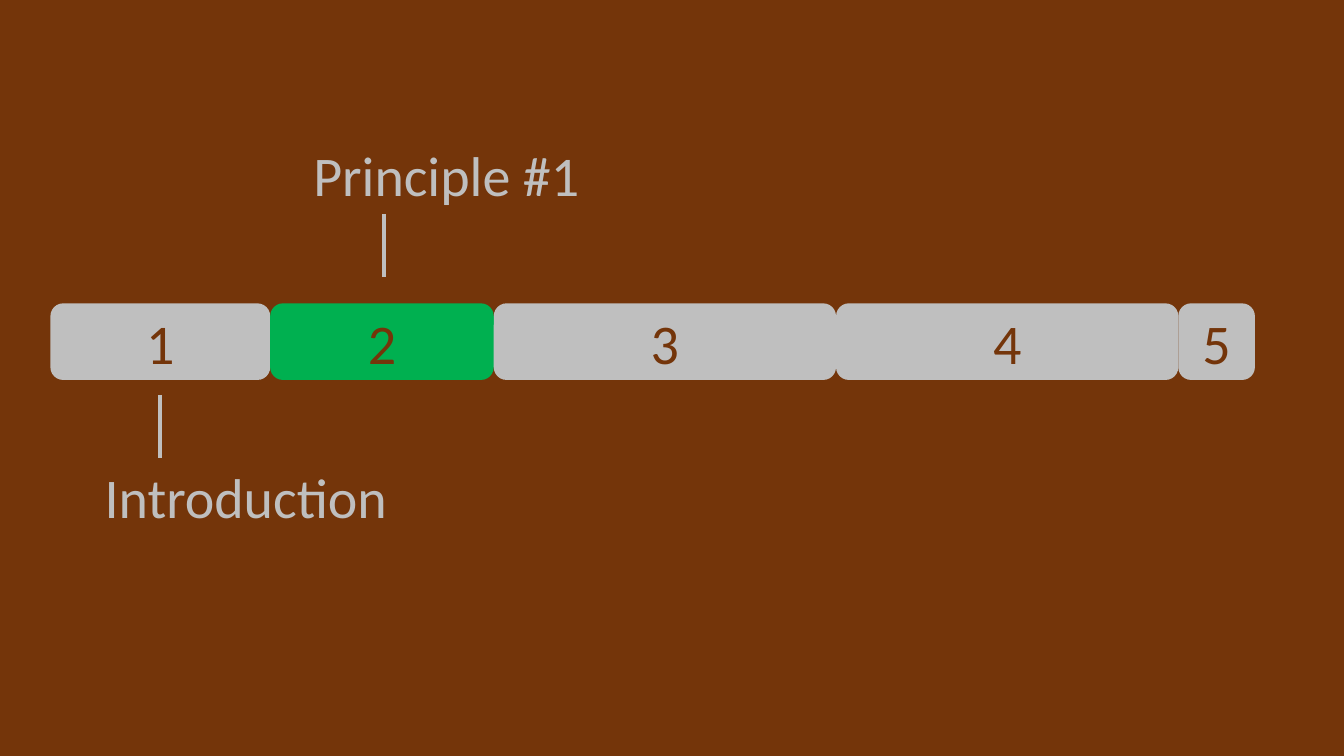
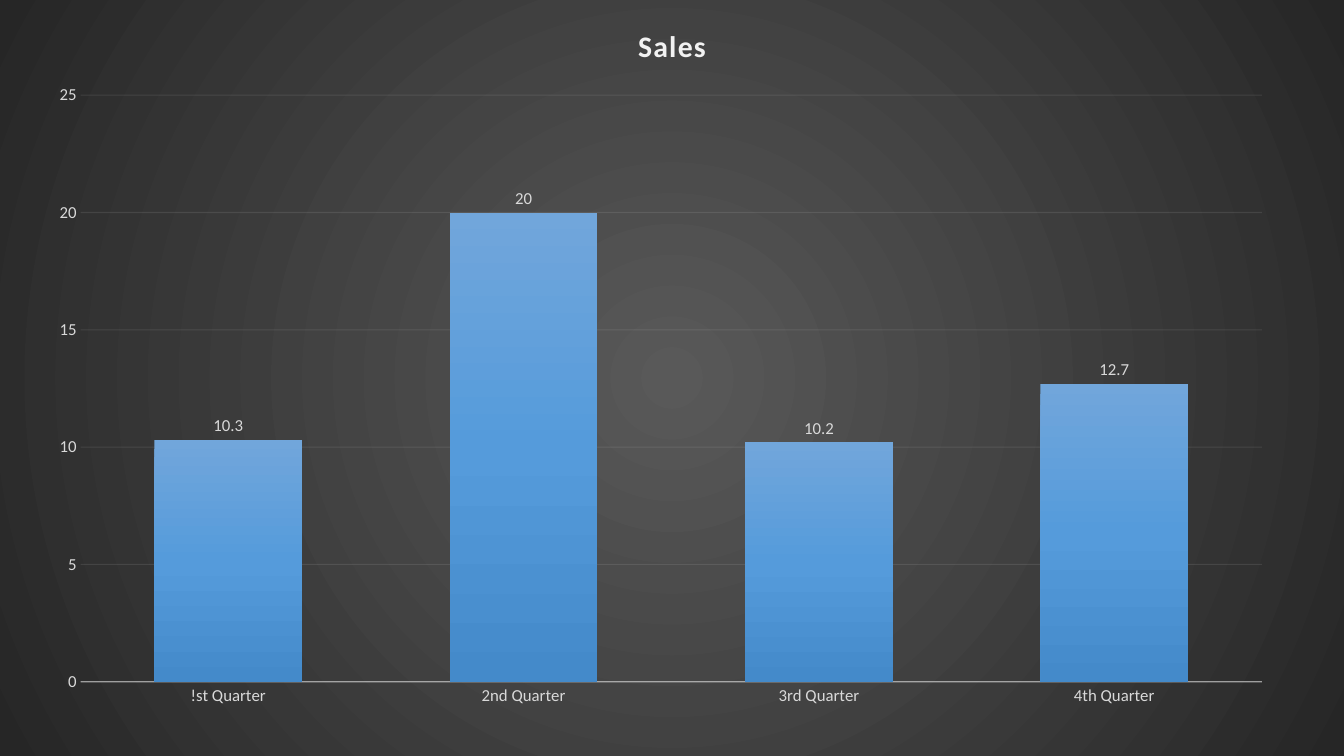
"""Build a progress timeline slide and a quarterly sales chart slide."""
from lxml.etree import SubElement
from pptx import Presentation
from pptx.chart.data import CategoryChartData
from pptx.dml.color import RGBColor
from pptx.enum.chart import XL_CHART_TYPE, XL_LABEL_POSITION, XL_TICK_MARK
from pptx.enum.shapes import MSO_CONNECTOR, MSO_SHAPE
from pptx.enum.text import MSO_ANCHOR, MSO_AUTO_SIZE, PP_ALIGN
from pptx.oxml import parse_xml
from pptx.oxml.ns import nsdecls, qn
from pptx.util import Pt

BROWN = RGBColor(0x74, 0x35, 0x0A)
SILVER = RGBColor(0xBF, 0xBF, 0xBF)
GREEN = RGBColor(0x00, 0xB0, 0x50)
BLACK = RGBColor(0x00, 0x00, 0x00)
PALE = RGBColor(0xF2, 0xF2, 0xF2)
LIGHT = RGBColor(0xD9, 0xD9, 0xD9)
BACKDROP = [(0, RGBColor(0x59, 0x59, 0x59)), (100, RGBColor(0x26, 0x26, 0x26))]
COLUMN_BLUES = [
    (0, RGBColor(0x71, 0xA6, 0xDB)),
    (50, RGBColor(0x55, 0x9B, 0xDB)),
    (100, RGBColor(0x44, 0x8A, 0xCA)),
]
FONT = "Calibri"


def style_font(font, size, color):
    font.name = FONT
    font.size = Pt(size)
    font.color.rgb = color


def gradient(stops, direction):
    marks = "".join(
        f'<a:gs pos="{percent * 1000}"><a:srgbClr val="{color}"/></a:gs>'
        for percent, color in stops
    )
    return parse_xml(
        f'<a:gradFill {nsdecls("a")} rotWithShape="1">'
        f"<a:gsLst>{marks}</a:gsLst>{direction}</a:gradFill>"
    )


prs = Presentation()
prs.slide_width, prs.slide_height = Pt(960), Pt(540)
blank = prs.slide_layouts[6]

timeline = prs.slides.add_slide(blank)
timeline.background.fill.solid()
timeline.background.fill.fore_color.rgb = BROWN

section_left = 36
section_widths = [157, 159.7, 244.5, 244.5, 54.7]
for number, width in enumerate(section_widths, start=1):
    section = timeline.shapes.add_shape(
        MSO_SHAPE.ROUNDED_RECTANGLE, Pt(section_left), Pt(216.7), Pt(width), Pt(54.7)
    )
    section.shadow.inherit = False
    section.fill.solid()
    section.fill.fore_color.rgb = GREEN if number == 2 else SILVER
    section.line.fill.background()
    section.text_frame.vertical_anchor = MSO_ANCHOR.MIDDLE
    numeral = section.text_frame.paragraphs[0]
    numeral.text = str(number)
    numeral.alignment = PP_ALIGN.CENTER
    style_font(numeral.font, 40, BROWN)
    section_left += width

callouts = [
    ("Principle #1", 216.7, 97.2, 274.4, 152.8),
    ("Introduction", 67.7, 327, 114.3, 282),
]
for wording, left, top, tick_x, tick_top in callouts:
    tick = timeline.shapes.add_connector(
        MSO_CONNECTOR.STRAIGHT, Pt(tick_x), Pt(tick_top), Pt(tick_x), Pt(tick_top + 45)
    )
    tick.line.color.rgb = SILVER
    tick.line.width = Pt(3.25)
    SubElement(tick.element.spPr, qn("a:effectLst"))

    callout = timeline.shapes.add_textbox(Pt(left), Pt(top), Pt(221.8), Pt(55.4))
    callout.text_frame.word_wrap = True
    callout.text_frame.auto_size = MSO_AUTO_SIZE.SHAPE_TO_FIT_TEXT
    caption = callout.text_frame.paragraphs[0]
    caption.text = wording
    style_font(caption.font, 40, SILVER)

sales_slide = prs.slides.add_slide(blank)
sales_slide.background.fill.solid()
sales_slide.background.fill.fore_color.rgb = BLACK

quarters = CategoryChartData()
quarters.categories = ["!st Quarter", "2nd Quarter", "3rd Quarter", "4th Quarter"]
quarters.add_series("Sales", [10.3, 20, 10.2, 12.7])
chart = sales_slide.shapes.add_chart(
    XL_CHART_TYPE.COLUMN_CLUSTERED, 0, 0, prs.slide_width, prs.slide_height, quarters
).chart
style_font(chart.font, 10, BLACK)
chart.has_legend = False

chart.has_title = True
chart.chart_title.include_in_layout = False
heading = chart.chart_title.text_frame.paragraphs[0].add_run()
heading.text = "Sales"
heading.font.bold = True
style_font(heading.font, 21.3, PALE)
for properties in chart.element.xpath("c:chart/c:title//a:rPr"):
    properties.set("spc", "100")

for axis in (chart.category_axis, chart.value_axis):
    axis.major_tick_mark = axis.minor_tick_mark = XL_TICK_MARK.NONE
    style_font(axis.tick_labels.font, 12, LIGHT)

baseline = chart.category_axis.format.line
baseline.color.rgb = PALE
baseline.width = Pt(1)

chart.value_axis.minimum_scale = 0
chart.value_axis.maximum_scale = 25
chart.value_axis.major_unit = 5
chart.value_axis.format.line.fill.background()
grid = chart.value_axis.major_gridlines.format.line
grid.color.rgb = PALE
grid.width = Pt(0.75)

for line_color, opacity in (
    ("//c:catAx/c:spPr//a:srgbClr", 54),
    ("//c:majorGridlines//a:srgbClr", 10),
):
    for color in chart.element.xpath(line_color):
        SubElement(color, qn("a:alpha")).set("val", str(opacity * 1000))

columns = chart.plots[0]
columns.gap_width = 100
columns.overlap = -24
columns.vary_by_categories = False
columns.has_data_labels = True
labels = columns.data_labels
labels.show_value = True
labels.position = XL_LABEL_POSITION.OUTSIDE_END
style_font(labels.font, 12, LIGHT)

sales = columns.series[0]
sales.invert_if_negative = False
sales.format.fill.solid()
for fill in chart.element.xpath("//c:ser/c:spPr/a:solidFill"):
    fill.getparent().replace(fill, gradient(COLUMN_BLUES, '<a:lin ang="5400000" scaled="0"/>'))

backdrop = parse_xml(f'<c:spPr {nsdecls("c", "a")}><a:ln><a:noFill/></a:ln></c:spPr>')
backdrop.insert(0, gradient(
    BACKDROP,
    '<a:path path="circle"><a:fillToRect l="50000" t="50000" r="50000" b="50000"/></a:path>',
))
chart.element.find(qn("c:txPr")).addprevious(backdrop)

plot_area = chart.element.find(qn("c:chart")).find(qn("c:plotArea"))
for layout in plot_area.findall(qn("c:layout")):
    plot_area.remove(layout)
plot_area.insert(0, parse_xml(
    f'<c:layout {nsdecls("c")}><c:manualLayout><c:layoutTarget val="inner"/>'
    '<c:xMode val="edge"/><c:yMode val="edge"/><c:x val="0.06"/><c:y val="0.126"/>'
    '<c:w val="0.879"/><c:h val="0.776"/></c:manualLayout></c:layout>'
))

prs.save("out.pptx")
